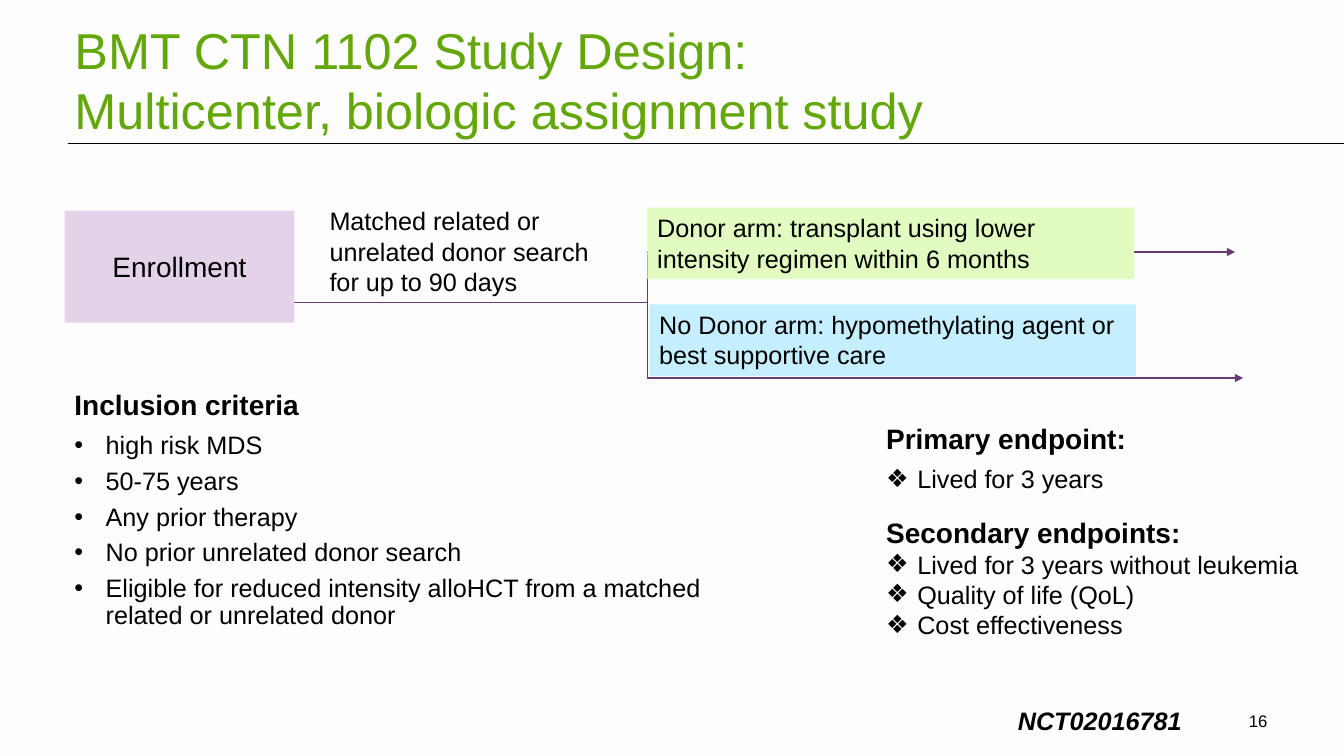
from dataclasses import dataclass

from lxml import etree
from pptx import Presentation
from pptx.dml.color import RGBColor
from pptx.enum.shapes import MSO_CONNECTOR as Connector, MSO_SHAPE as Preset
from pptx.enum.text import MSO_ANCHOR as Anchor, PP_ALIGN as Align
from pptx.oxml.ns import qn
from pptx.util import Inches, Pt

COLORS = {
    "page": "FDFDFD", "text": "000000", "title": "63A70A", "flow": "683973",
    "enrollment": "E4D3E8", "donor": "E2FBC0", "no_donor": "C5EFFF",
}
FONT = "Arial"
BULLET_INDENT = 0.31


@dataclass
class Para:
    text: str
    size: int = 18
    color: str = "text"
    bold: bool = False
    italic: bool = False
    bullet: str = ""
    after: float = 0
    spacing: float = 1.0
    align: Align = Align.LEFT


@dataclass
class Box:
    left: float
    top: float
    width: float
    height: float
    paras: list[Para]
    fill: str = ""
    anchor: Anchor = Anchor.TOP


@dataclass
class Line:
    start: tuple[float, float]
    end: tuple[float, float]
    color: str = "flow"
    arrow: bool = False


def rgb(name: str) -> RGBColor:
    return RGBColor.from_string(COLORS[name])


def add_bullet(para, symbol: str) -> None:
    properties = para._p.get_or_add_pPr()
    properties.set("marL", str(Inches(BULLET_INDENT)))
    properties.set("indent", str(-Inches(BULLET_INDENT)))
    etree.SubElement(properties, qn("a:buFont")).set("typeface", FONT)
    etree.SubElement(properties, qn("a:buChar")).set("char", symbol)


def write_para(para, item: Para) -> None:
    if item.bullet:
        add_bullet(para, item.bullet)
    layout = {"alignment": item.align, "line_spacing": item.spacing,
              "space_before": Pt(0), "space_after": Pt(item.after)}
    for name, value in layout.items():
        setattr(para, name, value)
    span = para.add_run()
    span.text = item.text
    style = {"name": FONT, "size": Pt(item.size),
             "bold": item.bold, "italic": item.italic}
    for name, value in style.items():
        setattr(span.font, name, value)
    span.font.color.rgb = rgb(item.color)


def draw_box(page, box: Box) -> None:
    place = [Inches(n) for n in (box.left, box.top, box.width, box.height)]
    if box.fill:
        shape = page.shapes.add_shape(Preset.RECTANGLE, *place)
        shape.shadow.inherit = False
        shape.fill.solid()
        shape.fill.fore_color.rgb = rgb(box.fill)
        shape.line.fill.background()
    else:
        shape = page.shapes.add_textbox(*place)
    frame = shape.text_frame
    frame.word_wrap = True
    frame.vertical_anchor = box.anchor
    for index, item in enumerate(box.paras):
        write_para(frame.add_paragraph() if index else frame.paragraphs[0], item)


def draw_line(page, line: Line) -> None:
    ends = [Inches(n) for n in (*line.start, *line.end)]
    connector = page.shapes.add_connector(Connector.STRAIGHT, *ends)
    connector.line.color.rgb = rgb(line.color)
    connector.line.width = Pt(0.75)
    if line.arrow:
        stroke = connector.line._get_or_add_ln()
        etree.SubElement(stroke, qn("a:tailEnd")).set("type", "triangle")
    etree.SubElement(connector._element.spPr, qn("a:effectLst"))


CRITERIA = [
    "high risk MDS", "50-75 years", "Any prior therapy",
    "No prior unrelated donor search",
    "Eligible for reduced intensity alloHCT from a matched related or unrelated donor",
]
SECONDARY = ["Lived for 3 years without leukemia", "Quality of life (QoL)",
             "Cost effectiveness"]
TITLE = ["BMT CTN 1102 Study Design:", "Multicenter, biologic assignment study"]
FORK_X, FORK_Y, NO_DONOR_Y = 6.42, 3, 3.75

LINES = [
    Line((0.67, 1.42), (13.33, 1.42), "text"),
    Line((FORK_X, 2.52), (FORK_X, NO_DONOR_Y)),
    Line((FORK_X, 2.5), (12.25, 2.5), arrow=True),
    Line((FORK_X, NO_DONOR_Y), (12.33, NO_DONOR_Y), arrow=True),
    Line((2.92, FORK_Y), (FORK_X, FORK_Y)),
]
BOXES = [
    Box(0.64, 0.14, 12, 1.25, [Para(text, 36, "title") for text in TITLE]),
    Box(0.64, 2.09, 2.28, 1.11, [Para("Enrollment", 20, align=Align.CENTER)],
        "enrollment", Anchor.MIDDLE),
    Box(3.17, 1.99, 3.04, 1.01,
        [Para("Matched related or unrelated donor search for up to 90 days")]),
    Box(FORK_X, 2.06, 4.83, 0.71,
        [Para("Donor arm: transplant using lower intensity regimen within 6 months")],
        "donor"),
    Box(6.44, 3.02, 4.83, 0.71,
        [Para("No Donor arm: hypomethylating agent or best supportive care")],
        "no_donor"),
    Box(0.64, 3.83, 6.73, 2.88,
        [Para("Inclusion criteria", 20, bold=True, after=8.5, spacing=0.9)]
        + [Para(text, bullet="•", after=6, spacing=0.9) for text in CRITERIA]),
    Box(8.69, 4.13, 4.64, 3.16,
        [Para("Primary endpoint:", 20, bold=True, after=6),
         Para("Lived for 3 years", bullet="❖", after=15.5),
         Para("Secondary endpoints:", 20, bold=True)]
        + [Para(text, bullet="❖") for text in SECONDARY]),
    Box(4.56, 6.95, 7.26, 0.4,
        [Para("NCT02016781", bold=True, italic=True, align=Align.RIGHT)],
        anchor=Anchor.MIDDLE),
    Box(12, 6.95, 0.67, 0.4, [Para("16", 12, align=Align.RIGHT)],
        anchor=Anchor.MIDDLE),
]


def main() -> None:
    deck = Presentation()
    deck.slide_width, deck.slide_height = Inches(13.33), Inches(7.5)
    page = deck.slides.add_slide(deck.slide_layouts[6])
    page.background.fill.solid()
    page.background.fill.fore_color.rgb = rgb("page")
    for line in LINES:
        draw_line(page, line)
    for box in BOXES:
        draw_box(page, box)
    deck.save("out.pptx")


if __name__ == "__main__":
    main()
